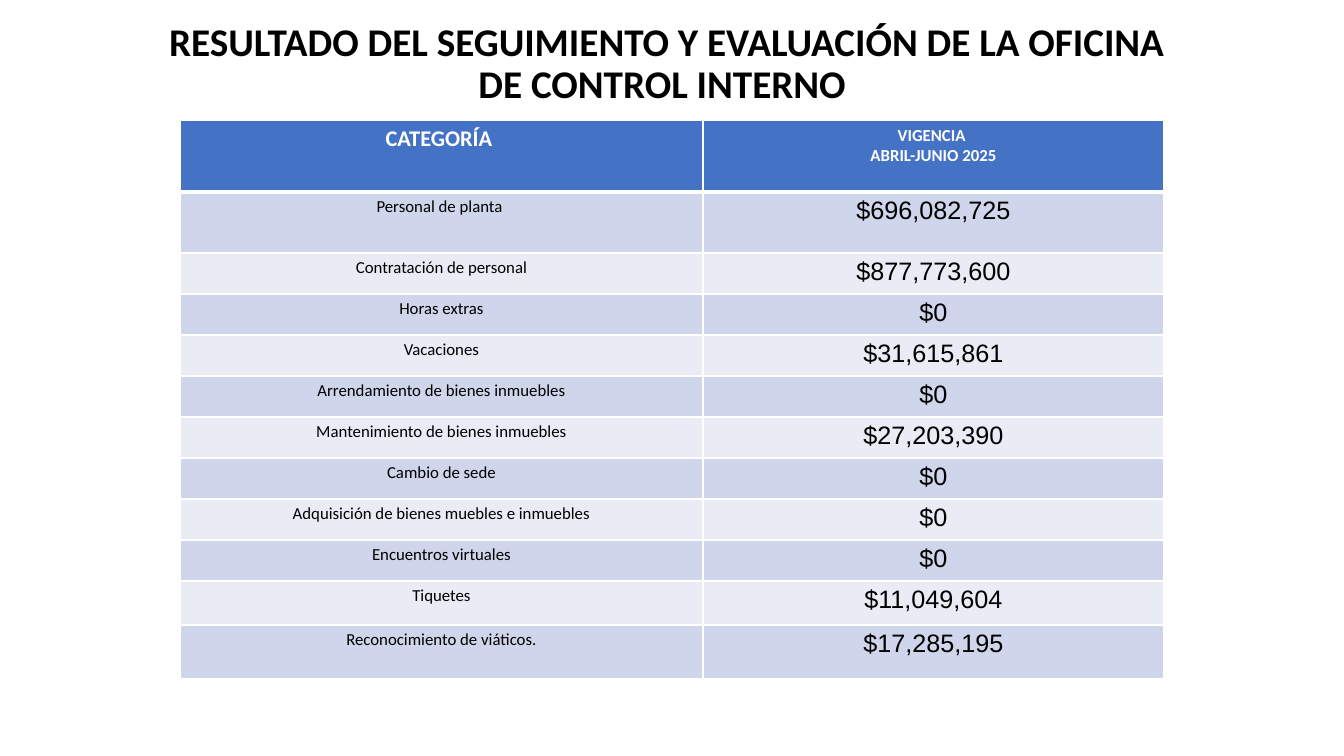
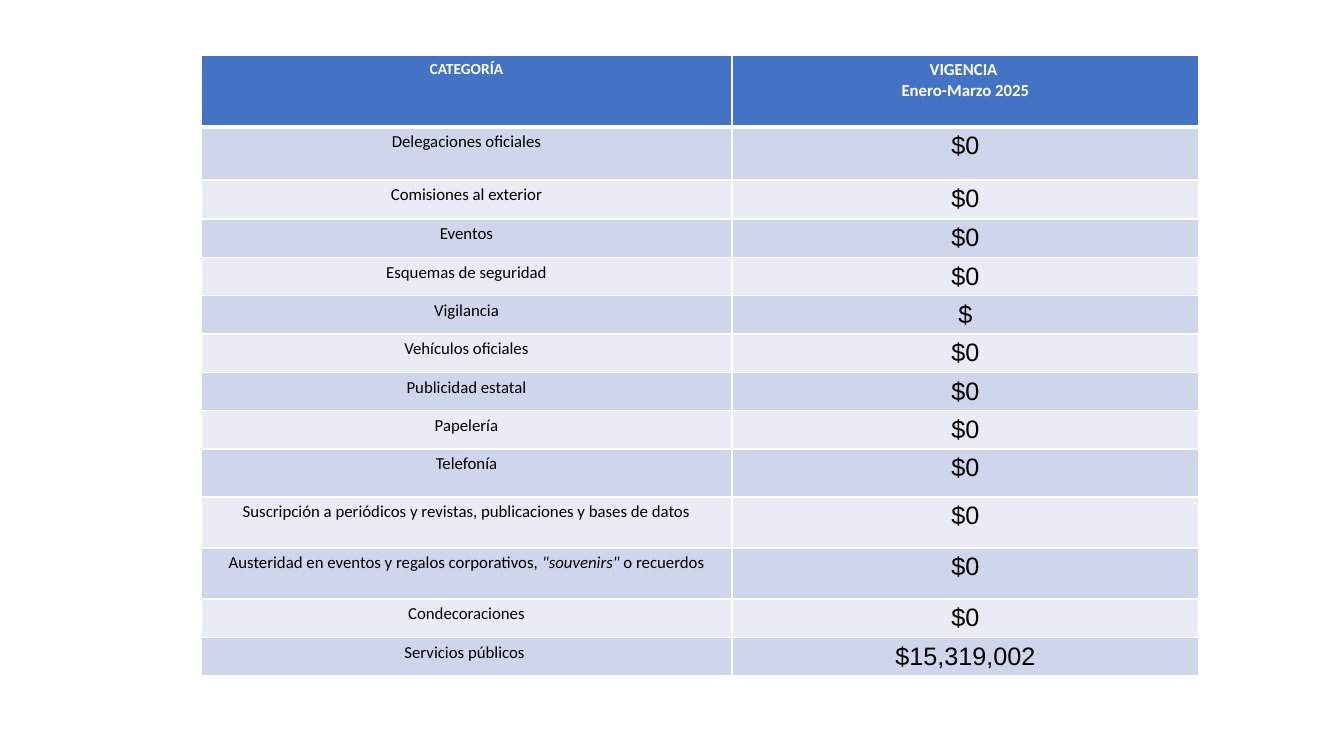
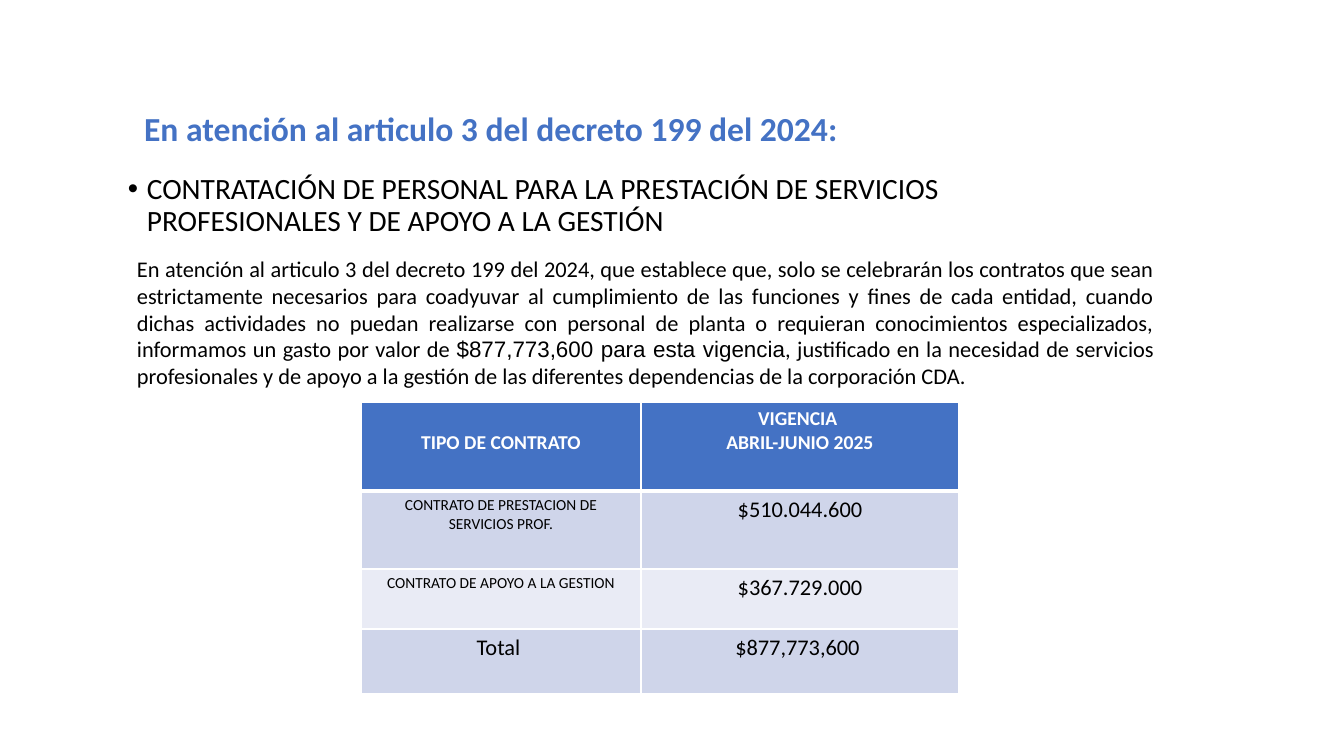
from dataclasses import dataclass
from lxml.etree import SubElement
from pptx import Presentation
from pptx.dml.color import RGBColor
from pptx.enum.text import MSO_ANCHOR, MSO_AUTO_SIZE, PP_ALIGN
from pptx.oxml.ns import qn
from pptx.util import Emu, Pt


@dataclass(frozen=True)
class Theme:
    blue: str = "4472C4"
    white: str = "FFFFFF"
    black: str = "000000"
    bands: tuple = ("CFD5EA", "E9EBF5")
    font: str = "Calibri"
    number_font: str = "Arial"
    title: int = 28
    heading: int = 24
    topic: int = 21
    amount: int = 18
    body: int = 16
    subhead: int = 14
    label: int = 12
    small: int = 11
    thin: int = 1
    thick: int = 3


@dataclass(frozen=True)
class Style:
    size: int
    color: str = Theme.black
    font: str = Theme.font
    bold: bool = False
    align: PP_ALIGN = PP_ALIGN.CENTER
    spacing: float = 1.0


THEME = Theme()
LABEL = Style(THEME.label)
AMOUNT = Style(THEME.amount, font=THEME.number_font)
TITLE_ONLY, BLANK = 5, 6


def px(length):
    return Emu(round(length * 914400 / 100.8))


def header(size):
    return Style(size, THEME.white, bold=True)


def write(frame, text, style):
    paragraphs = text.split("\n") if isinstance(text, str) else [text]
    for index, content in enumerate(paragraphs):
        para = frame.add_paragraph() if index else frame.paragraphs[0]
        para.alignment = style.align
        para.line_spacing = style.spacing
        spans = [(content, {})] if isinstance(content, str) else content
        for words, changes in spans:
            span = para.add_run()
            span.text = words
            for name, value in changes.items():
                setattr(span.font, name, value)
        para.font.size = Pt(style.size)
        para.font.name = style.font
        para.font.bold = style.bold
        para.font.color.rgb = RGBColor.from_string(style.color)


def place(shape, box):
    shape.left, shape.top, shape.width, shape.height = map(px, box)


def add_title(page, box, text, style, anchor):
    title = page.shapes.title
    place(title, box)
    frame = title.text_frame
    frame.word_wrap = True
    frame.auto_size = MSO_AUTO_SIZE.NONE
    frame.vertical_anchor = anchor
    write(frame, text, style)


def add_text(page, box, text, style, bullet_indent=0):
    frame = page.shapes.add_textbox(*map(px, box)).text_frame
    frame.word_wrap = True
    if bullet_indent:
        properties = frame.paragraphs[0]._p.get_or_add_pPr()
        properties.set("marL", str(px(bullet_indent)))
        properties.set("indent", str(-px(bullet_indent)))
        SubElement(properties, qn("a:buFont"), typeface="Arial")
        SubElement(properties, qn("a:buChar"), char="•")
    write(frame, text, style)


def add_borders(cell, row):
    properties = cell._tc.get_or_add_tcPr()
    thick_sides = {0: "lnB", 1: "lnT"}
    for side in ("lnL", "lnR", "lnT", "lnB"):
        width = THEME.thick if side == thick_sides.get(row) else THEME.thin
        line = SubElement(properties, qn(f"a:{side}"), w=str(Pt(width)))
        fill = SubElement(line, qn("a:solidFill"))
        SubElement(fill, qn("a:srgbClr"), val=THEME.white)


def add_cost_table(page, corner, widths, heights, rows, styles):
    size = sum(widths), sum(heights)
    table = page.shapes.add_table(
        len(rows), len(widths), *map(px, corner + size)).table
    for column, width in zip(table.columns, widths):
        column.width = px(width)
    for index, (row, height) in enumerate(zip(rows, heights)):
        table.rows[index].height = px(height)
        fill = THEME.bands[(index - 1) % 2] if index else THEME.blue
        for cell, text, style in zip(table.rows[index].cells, row, styles[index]):
            add_borders(cell, index)
            cell.fill.solid()
            cell.fill.fore_color.rgb = RGBColor.from_string(fill)
            write(cell.text_frame, text, style)
    return table


def add_results_page(deck):
    page = deck.slides.add_slide(deck.slide_layouts[TITLE_ONLY])
    add_title(
        page, (157, 10, 1019, 110),
        "RESULTADO DEL SEGUIMIENTO Y EVALUACIÓN DE LA OFICINA DE CONTROL INTERNO ",
        Style(THEME.title, bold=True, spacing=0.9), MSO_ANCHOR.MIDDLE)
    rows = [
        ("CATEGORÍA ", "VIGENCIA \nABRIL-JUNIO 2025"),
        ("Personal de planta ", "$696,082,725"),
        ("Contratación de personal", "$877,773,600"),
        ("Horas extras", "$0"),
        ("Vacaciones", "$31,615,861"),
        ("Arrendamiento de bienes inmuebles", "$0"),
        ("Mantenimiento de bienes inmuebles", "$27,203,390"),
        ("Cambio de sede", "$0"),
        ("Adquisición de bienes muebles e inmuebles", "$0"),
        ("Encuentros virtuales", "$0"),
        ("Tiquetes", "$11,049,604"),
        ("Reconocimiento de viáticos.", "$17,285,195"),
    ]
    styles = [(header(THEME.body), header(THEME.label))] + [(LABEL, AMOUNT)] * 11
    heights = [72, 61] + [41] * 8 + [44, 54]
    add_cost_table(page, (180, 120), (523, 461), heights, rows, styles)


def add_categories_page(deck):
    page = deck.slides.add_slide(deck.slide_layouts[BLANK])
    souvenirs = [
        ("Austeridad en eventos y regalos corporativos, ", {}),
        ('"souvenirs"', {"italic": True}),
        (" o recuerdos", {}),
    ]
    categories = [
        "Delegaciones oficiales", "Comisiones al exterior", "Eventos",
        "Esquemas de seguridad", "Vigilancia", "Vehículos oficiales",
        "Publicidad estatal", "Papelería", "Telefonía",
        "Suscripción a periódicos y revistas, publicaciones y bases de datos",
        souvenirs, "Condecoraciones", "Servicios públicos ",
    ]
    amounts = {"Vigilancia": "$", "Servicios públicos ": "$15,319,002"}
    rows = [("CATEGORÍA", "VIGENCIA \nEnero-Marzo 2025")]
    for category in categories:
        key = category if isinstance(category, str) else ""
        rows.append((category, amounts.get(key, "$0")))
    styles = [(header(THEME.small), header(THEME.label))]
    styles += [(LABEL, AMOUNT)] * len(categories)
    heights = [72, 53, 39] + [38] * 6 + [48, 51, 51, 38, 38]
    add_cost_table(page, (201, 55), (531, 467), heights, rows, styles)


def add_contracts_page(deck):
    page = deck.slides.add_slide(deck.slide_layouts[TITLE_ONLY])
    add_title(
        page, (134, 103, 728, 50),
        "En atención al articulo 3 del decreto 199 del 2024:",
        Style(THEME.heading, THEME.blue, bold=True, align=PP_ALIGN.LEFT),
        MSO_ANCHOR.TOP)
    add_text(
        page, (118, 169, 948, 81),
        "CONTRATACIÓN DE PERSONAL PARA LA PRESTACIÓN DE SERVICIOS "
        "PROFESIONALES Y DE APOYO A LA GESTIÓN",
        Style(THEME.topic, align=PP_ALIGN.LEFT, spacing=0.9), bullet_indent=19)
    explanation = [
        ("En atención al articulo 3 del decreto 199 del 2024, que establece que, "
         "solo se celebrarán los contratos que sean estrictamente necesarios para "
         "coadyuvar al cumplimiento de las funciones y fines de cada entidad, "
         "cuando dichas actividades no puedan realizarse con personal de planta o "
         "requieran conocimientos especializados, informamos un gasto por valor de ",
         {}),
        ("$877,773,600 para esta vigencia", {"name": THEME.number_font}),
        (", justificado en la necesidad de servicios profesionales y de apoyo a la "
         "gestión de las diferentes dependencias de la corporación CDA.", {}),
    ]
    add_text(page, (127, 250, 1037, 146), explanation,
             Style(THEME.body, align=PP_ALIGN.JUSTIFY))
    rows = [
        ("TIPO DE CONTRATO", "VIGENCIA \nABRIL-JUNIO 2025"),
        ("CONTRATO DE PRESTACION DE SERVICIOS PROF.", "$510.044.600"),
        ("CONTRATO DE APOYO A LA GESTION", "$367.729.000"),
        ("Total ", "$877,773,600 "),
    ]
    small, body = Style(THEME.small), Style(THEME.body)
    styles = [(header(THEME.subhead),) * 2, (small, body), (small, body), (body, body)]
    table = add_cost_table(
        page, (361, 402), (280, 318), (89, 78, 60, 65), rows, styles)
    table.cell(0, 0).margin_top = px(29)


def main():
    deck = Presentation()
    deck.slide_width, deck.slide_height = px(1344), px(756)
    add_results_page(deck)
    add_categories_page(deck)
    add_contracts_page(deck)
    deck.save("out.pptx")


if __name__ == "__main__":
    main()
